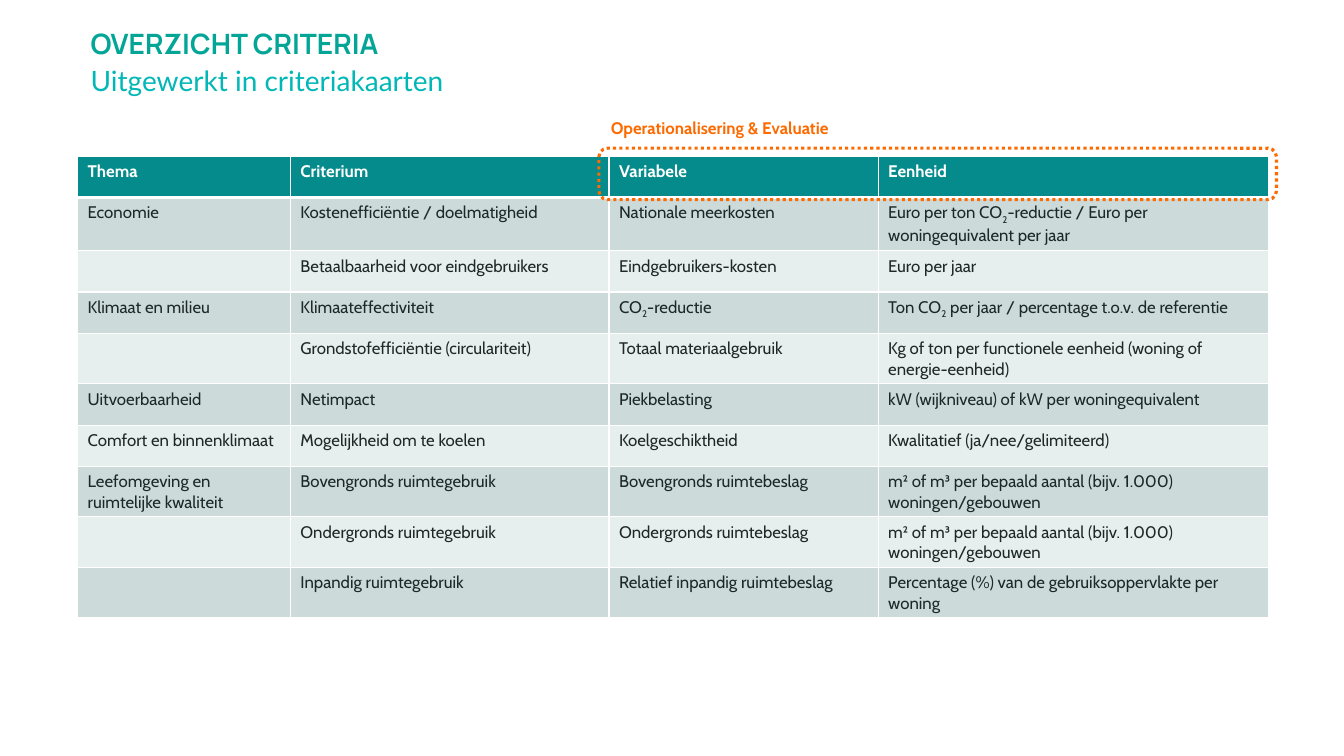
from pptx import Presentation
from pptx.dml.color import RGBColor
from pptx.enum.dml import MSO_LINE
from pptx.enum.shapes import MSO_SHAPE
from pptx.enum.text import MSO_ANCHOR
from pptx.oxml.ns import qn
from pptx.util import Inches, Pt
from lxml.etree import SubElement

COLORS = {
    "title": "03A696", "subtitle": "02B7B7", "accent": "FD6A00",
    "header": "058B8B", "odd": "CCDADA", "even": "E7EEEE",
    "text": "1D2928", "white": "FFFFFF",
}
TITLE = "OVERZICHT CRITERIA"
SUBTITLE = "Uitgewerkt in criteriakaarten"
CALLOUT = "Operationalisering & Evaluatie"
AREA_UNIT = "m² of m³ per bepaald aantal (bijv. 1.000) woningen/gebouwen"
CRITERIA = [
    ("Thema", "Criterium", "Variabele", "Eenheid"),
    ("Economie", "Kostenefficiëntie / doelmatigheid", "Nationale meerkosten",
     "Euro per ton CO₂-reductie / Euro per woningequivalent per jaar"),
    ("", "Betaalbaarheid voor eindgebruikers", "Eindgebruikers-kosten", "Euro per jaar"),
    ("Klimaat en milieu", "Klimaateffectiviteit", "CO₂-reductie",
     "Ton CO₂ per jaar / percentage t.o.v. de referentie"),
    ("", "Grondstofefficiëntie (circulariteit)", "Totaal materiaalgebruik",
     "Kg of ton per functionele eenheid (woning of energie-eenheid)"),
    ("Uitvoerbaarheid", "Netimpact", "Piekbelasting",
     "kW (wijkniveau) of kW per woningequivalent"),
    ("Comfort en binnenklimaat", "Mogelijkheid om te koelen", "Koelgeschiktheid",
     "Kwalitatief (ja/nee/gelimiteerd)"),
    ("Leefomgeving en ruimtelijke kwaliteit", "Bovengronds ruimtegebruik",
     "Bovengronds ruimtebeslag", AREA_UNIT),
    ("", "Ondergronds ruimtegebruik", "Ondergronds ruimtebeslag", AREA_UNIT),
    ("", "Inpandig ruimtegebruik", "Relatief inpandig ruimtebeslag",
     "Percentage (%) van de gebruiksoppervlakte per woning"),
]
COLUMN_WIDTHS = (2.11, 3.16, 2.67, 3.87)
ROW_HEIGHT = 0.41
TABLE_LEFT, TABLE_TOP = 0.77, 1.55


def rgb(name):
    return RGBColor.from_string(COLORS[name])


def style(paragraph, font_name, size, color, bold=False):
    font = paragraph.font
    font.name, font.size, font.bold = font_name, Pt(size), bold
    font.color.rgb = rgb(color)


def add_label(slide, text, box, font_name, size, color, bold=False,
              line_spacing=1.1, anchor=MSO_ANCHOR.TOP, inset=0):
    frame = slide.shapes.add_textbox(*map(Inches, box)).text_frame
    frame.word_wrap = True
    frame.vertical_anchor = anchor
    frame.margin_top = frame.margin_bottom = Inches(inset)
    paragraph = frame.paragraphs[0]
    paragraph.text = text
    paragraph.line_spacing = line_spacing
    style(paragraph, font_name, size, color, bold)


def add_borders(cell, bottom_width):
    properties = cell._tc.get_or_add_tcPr()
    for side, width in (("L", 1), ("R", 1), ("T", 1), ("B", bottom_width)):
        line = SubElement(properties, qn(f"a:ln{side}"), w=str(Pt(width)))
        fill = SubElement(line, qn("a:solidFill"))
        SubElement(fill, qn("a:srgbClr"), val=COLORS["white"])


def write_cell(paragraph, text):
    """Write the text, lowering each ₂ as a subscript digit."""
    for i, part in enumerate(text.split("₂")):
        if i:
            subscript = paragraph.add_run()
            subscript.text = "2"
            subscript.font._element.set("baseline", "-25000")
        if part:
            paragraph.add_run().text = part


def add_criteria_table(slide):
    table = slide.shapes.add_table(
        len(CRITERIA), len(COLUMN_WIDTHS), Inches(TABLE_LEFT), Inches(TABLE_TOP),
        Inches(sum(COLUMN_WIDTHS)), Inches(ROW_HEIGHT * len(CRITERIA))).table
    for column, width in zip(table.columns, COLUMN_WIDTHS):
        column.width = Inches(width)
    for r, criterion in enumerate(CRITERIA):
        table.rows[r].height = Inches(ROW_HEIGHT)
        is_header = r == 0
        fill = "header" if is_header else "odd" if r % 2 else "even"
        for c, text in enumerate(criterion):
            cell = table.cell(r, c)
            add_borders(cell, 3 if is_header else 1)
            cell.fill.solid()
            cell.fill.fore_color.rgb = rgb(fill)
            paragraph = cell.text_frame.paragraphs[0]
            write_cell(paragraph, text)
            style(paragraph, "Cabin", 12, "white" if is_header else "text", is_header)


def add_evaluation_frame(slide):
    frame = slide.shapes.add_shape(
        MSO_SHAPE.ROUNDED_RECTANGLE, *map(Inches, (5.94, 1.47, 6.72, 0.51)))
    frame.shadow.inherit = False
    frame.fill.background()
    frame.line.color.rgb = rgb("accent")
    frame.line.width = Pt(2.25)
    frame.line.dash_style = MSO_LINE.ROUND_DOT


def main():
    deck = Presentation()
    deck.slide_width, deck.slide_height = Inches(13.33), Inches(7.5)
    slide = deck.slides.add_slide(deck.slide_layouts[6])
    add_label(slide, SUBTITLE, (0.8, 0.6, 11.73, 0.79), "Lato", 20, "subtitle")
    add_label(slide, TITLE, (0.8, 0.21, 11.73, 0.39), "Manrope", 20, "title",
              bold=True, line_spacing=0.9, anchor=MSO_ANCHOR.BOTTOM)
    add_criteria_table(slide)
    add_label(slide, CALLOUT, (5.96, 1.11, 6.24, 0.28), "Cabin", 12, "accent",
              bold=True, inset=0.04)
    add_evaluation_frame(slide)
    deck.save("out.pptx")


if __name__ == "__main__":
    main()
